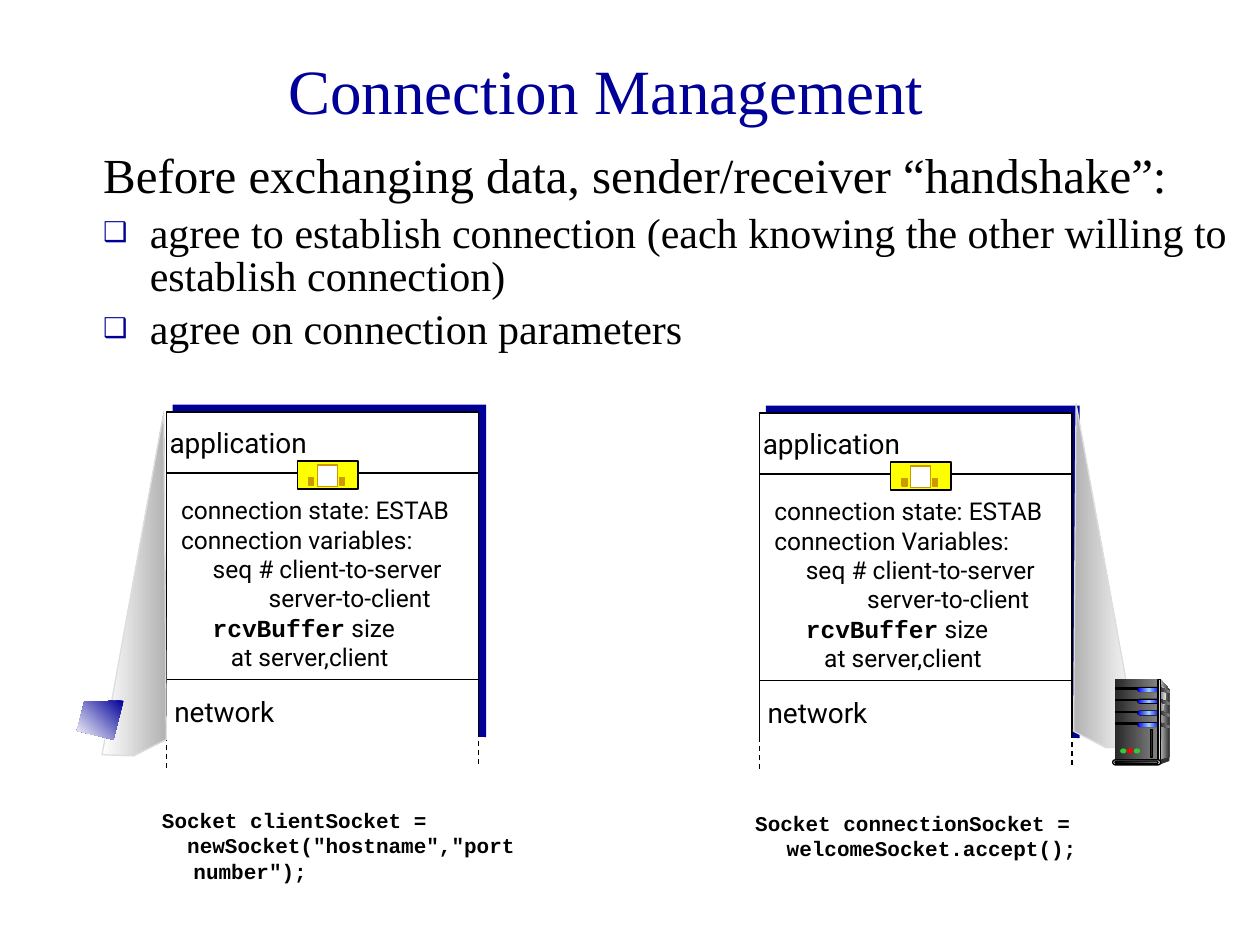
from copy import deepcopy
from lxml import etree
from pptx import Presentation
from pptx.dml.color import RGBColor
from pptx.enum import dml, shapes, text
from pptx.oxml import ns
from pptx.util import Pt

HEX = {
    "navy": "000099", "white": "FFFFFF", "black": "000000", "yellow": "FFFF00",
    "gold": "CC9900", "silver": "B2B2B2", "pale": "DDDDDD", "coal": "292929",
    "dark": "333333", "grey": "808080", "light": "F8F8F8", "blue": "0000FF",
    "sky": "99CCFF", "green": "33CC33", "red": "FF0000",
}
SERIF, SANS, MONO = "Times New Roman", "Roboto", "Courier New"
RECT = shapes.MSO_SHAPE.RECTANGLE
PILL = shapes.MSO_SHAPE.ROUNDED_RECTANGLE
OVAL = shapes.MSO_SHAPE.OVAL
ALIGN = text.PP_ALIGN


def paint(shape, fill, edge=None, angle=0):
    """Fill with one colour, or with a gradient of evenly spaced ones."""
    shape.shadow.inherit = False
    names = fill.split()
    if len(names) == 1:
        shape.fill.solid()
        shape.fill.fore_color.rgb = RGBColor.from_string(HEX[fill])
    else:
        shape.fill.gradient()
        shape.fill.gradient_angle = angle
        stops = shape._element.spPr.find(".//" + ns.qn("a:gsLst"))
        while len(stops) < len(names):
            stops.append(deepcopy(stops[0]))
        for i, stop in enumerate(shape.fill.gradient_stops):
            stop.position = i / (len(names) - 1)
            stop.color.rgb = RGBColor.from_string(HEX[names[i]])
    if edge:
        shape.line.color.rgb = RGBColor.from_string(HEX[edge])
        shape.line.width = Pt(0.75)
    else:
        shape.line.fill.background()


def write(par, words, size, face, color="black", bold=False, left=0, first=0):
    """Add one run and set the indents of its paragraph."""
    run = par.add_run()
    run.text = words
    run.font.size, run.font.name, run.font.bold = Pt(size), face, bold
    run.font.color.rgb = RGBColor.from_string(HEX[color])
    props = par._p.get_or_add_pPr()
    props.set("marL", str(Pt(left)))
    props.set("indent", str(Pt(first)))


deck = Presentation()
deck.slide_width, deck.slide_height = Pt(720), Pt(540)
slide = deck.slides.add_slide(deck.slide_layouts[1])
tree = slide.shapes

# Title
title = tree.title
title.left, title.top, title.width, title.height = Pt(40.3), Pt(15), Pt(612), Pt(72)
title.text_frame.auto_size = text.MSO_AUTO_SIZE.NONE
title.text_frame.vertical_anchor = text.MSO_ANCHOR.MIDDLE
par = title.text_frame.paragraphs[0]
par.alignment = ALIGN.CENTER
write(par, "Connection Management", 36, SERIF, "navy")

# Lead sentence and bullets
body = slide.placeholders[1]
body.left, body.top, body.width, body.height = Pt(51.8), Pt(84.2), Pt(656.8), Pt(172)
frame = body.text_frame
frame.auto_size = text.MSO_AUTO_SIZE.NONE
items = [
    ("Before exchanging data, sender/receiver “handshake”:", 28, 7),
    ("agree to establish connection (each knowing the other willing to "
     "establish connection)", 24, 6),
    ("agree on connection parameters", 24, 6),
]
for i, (words, size, gap) in enumerate(items):
    par = frame.add_paragraph() if i else frame.paragraphs[0]
    par.alignment = ALIGN.JUSTIFY
    par.line_spacing, par.space_before = 0.85, Pt(gap)
    write(par, words, size, SERIF, left=26.6, first=-26.6)
    props = par._p.get_or_add_pPr()
    if i == 0:
        etree.SubElement(props, ns.qn("a:buNone"))
        continue
    tint = etree.SubElement(props, ns.qn("a:buClr"))
    etree.SubElement(tint, ns.qn("a:srgbClr"), val=HEX["navy"])
    etree.SubElement(props, ns.qn("a:buSzPct"), val="65000")
    etree.SubElement(props, ns.qn("a:buChar"), char="❑")

# Host stacks: boxes as left, top, width, height; lines as two ends
stack = [
    ("box", (98.6, 231.2, 179.3, 190), "navy", None),
    ("box", (95, 235.4, 178.6, 194.4), "white", "black"),
    ("box", (92.9, 421.2, 183.6, 14.4), "white", None),
    ("line", (95, 270.3, 274, 270.3), None, None),
    ("line", (95, 388.2, 274, 388.2), None, None),
    ("dash", (95, 420.5, 95, 439), None, None),
    ("dash", (273.6, 418.3, 273.6, 437), None, None),
    ("box", (169.9, 263.5, 34.6, 16), "yellow", "black"),
    ("box", (181.4, 265.7, 11.5, 12.5), "white", "gold"),
    ("box", (193.9, 272.9, 2.9, 4.3), "gold", "gold"),
    ("box", (176.4, 272.9, 2.9, 4.3), "gold", "gold"),
]
labels = [("application", 85, 239.8, 102.2), ("network", 88.6, 393.1, 79.2)]
hosts = [
    (0, 0, "variables", 50,
     [("Socket clientSocket =", -18),
      ('newSocket("hostname","port number");', -3.6)], 458),
    (339, 0.6, "Variables", 53,
     [("Socket connectionSocket = welcomeSocket.accept();", -18)], 459.4),
]
for dx, dy, noun, inset, code, low in hosts:
    for kind, (a, b, c, d), fill, edge in stack:
        if kind == "box":
            box = tree.add_shape(RECT, Pt(a + dx), Pt(b + dy), Pt(c), Pt(d))
            paint(box, fill, edge)
            continue
        line = tree.add_connector(shapes.MSO_CONNECTOR.STRAIGHT,
                                  Pt(a + dx), Pt(b + dy), Pt(c + dx), Pt(d + dy))
        line.line.color.rgb = RGBColor.from_string(HEX["black"])
        line.line.width = Pt(0.75)
        if kind == "dash":
            line.line.dash_style = dml.MSO_LINE.DASH
        etree.SubElement(line._element.spPr, ns.qn("a:effectLst"))

    # Layer names
    for words, x, y, wide in labels:
        box = tree.add_textbox(Pt(x + dx), Pt(y + dy), Pt(wide), Pt(26.6))
        box.text_frame.word_wrap = False
        box.text_frame.auto_size = text.MSO_AUTO_SIZE.SHAPE_TO_FIT_TEXT
        par = box.text_frame.paragraphs[0]
        par.alignment = ALIGN.CENTER
        write(par, words, 16, SANS)

    # Connection state
    box = tree.add_textbox(Pt(96.4 + dx), Pt(279.4 + dy), Pt(183.6), Pt(158.4))
    frame = box.text_frame
    frame.word_wrap = True
    rows = [
        ("connection state: ESTAB", 0), (f"connection {noun}:", 0),
        ("seq # client-to-server", 18), ("server-to-client", inset),
        (" size", 18), ("at server,client", 28.5),
    ]
    for i, (words, left) in enumerate(rows):
        par = frame.add_paragraph() if i else frame.paragraphs[0]
        if words == " size":
            write(par, "rcvBuffer", 14, MONO, bold=True)
        write(par, words, 14, SANS, left=left)

    # Socket call
    box = tree.add_textbox(Pt(85.5 + dx), Pt(low), Pt(227.5), Pt(50))
    frame = box.text_frame
    frame.word_wrap = True
    for i, (words, first) in enumerate(code):
        par = frame.add_paragraph() if i else frame.paragraphs[0]
        write(par, words, 12, MONO, bold=True, left=18, first=first)

# Fans, client tile and server: kind (None for an outline), geometry, fill, edge, angle
fan = [(58.3, 431.3), (93.6, 235.4), (95, 422.6), (76.3, 432)]
mirror = [(708.5 - x, y - 4.7) for x, y in fan]
tile = [(70.6, 400.3), (48.2, 401), (43.9, 417.6), (64.8, 422.6)]
side = [(663.1, 388.1), (668.2, 393.8), (668.2, 432.7), (661.7, 434.9)]
shine = [(663.1, 391), (666.7, 394.6), (663.8, 410), (663.1, 433.4)]
foot = [(662.4, 434.2), (662.4, 437), (668.2, 434.9), (668.2, 432.7)]
parts = [
    (None, fan, "white silver", "pale", 0),
    (None, mirror, "silver white", "pale", 0),
    (None, tile, "navy white", None, 225),
    (None, side, "pale dark", None, 0),
    (RECT, (637.2, 388.1, 23.8, 46.8), "coal grey", None, 0),
    (None, shine, "grey light", None, 0),
]
for i in range(4):
    y = 393.1 + 6.7 * i
    band = [(662.4, y - 0.5), (668.2, y + 1.5), (668.2, y + 3), (662.4, y + 1.5)]
    parts += [
        (None, band, "coal grey", None, 0),
        (RECT, (637.6, y, 13.7, 0.7), "black", "black", 0),
        (PILL, (649.8, y - 0.5, 13, 2.9), "black", None, 0),
        (PILL, (650.2, y, 12.6, 2.2), "blue sky blue", None, 0),
    ]
parts += [
    (RECT, (661.7, 388.1, 1.4, 46.8), "dark pale dark", "black", 0),
    (OVAL, (667.4, 432.7, 0.7, 2.2), "dark", None, 0),
    (None, foot, "dark", None, 0),
    (PILL, (635.8, 434.2, 27.4, 2.9), "pale", "black", 0),
    (PILL, (637.2, 434.9, 24.5, 1.4), "black grey", "black", 0),
    (RECT, (657.4, 416.9, 1.4, 15.8), "coal", "black", 0),
]
for x, hue in ((640.1, "green"), (643.9, "red"), (647.9, "green")):
    parts.append((OVAL, (x, 427.7, 3.6, 2.9), hue, None, 0))

for kind, geom, fill, edge, angle in parts:
    if kind is None:
        ends = [(Pt(x), Pt(y)) for x, y in geom]
        pen = tree.build_freeform(*ends[0])
        pen.add_line_segments(ends[1:], close=True)
        part = pen.convert_to_shape()
    else:
        part = tree.add_shape(kind, *[Pt(v) for v in geom])
        if kind == PILL:
            part.adjustments[0] = 0.5
    paint(part, fill, edge, angle)

deck.save("out.pptx")
